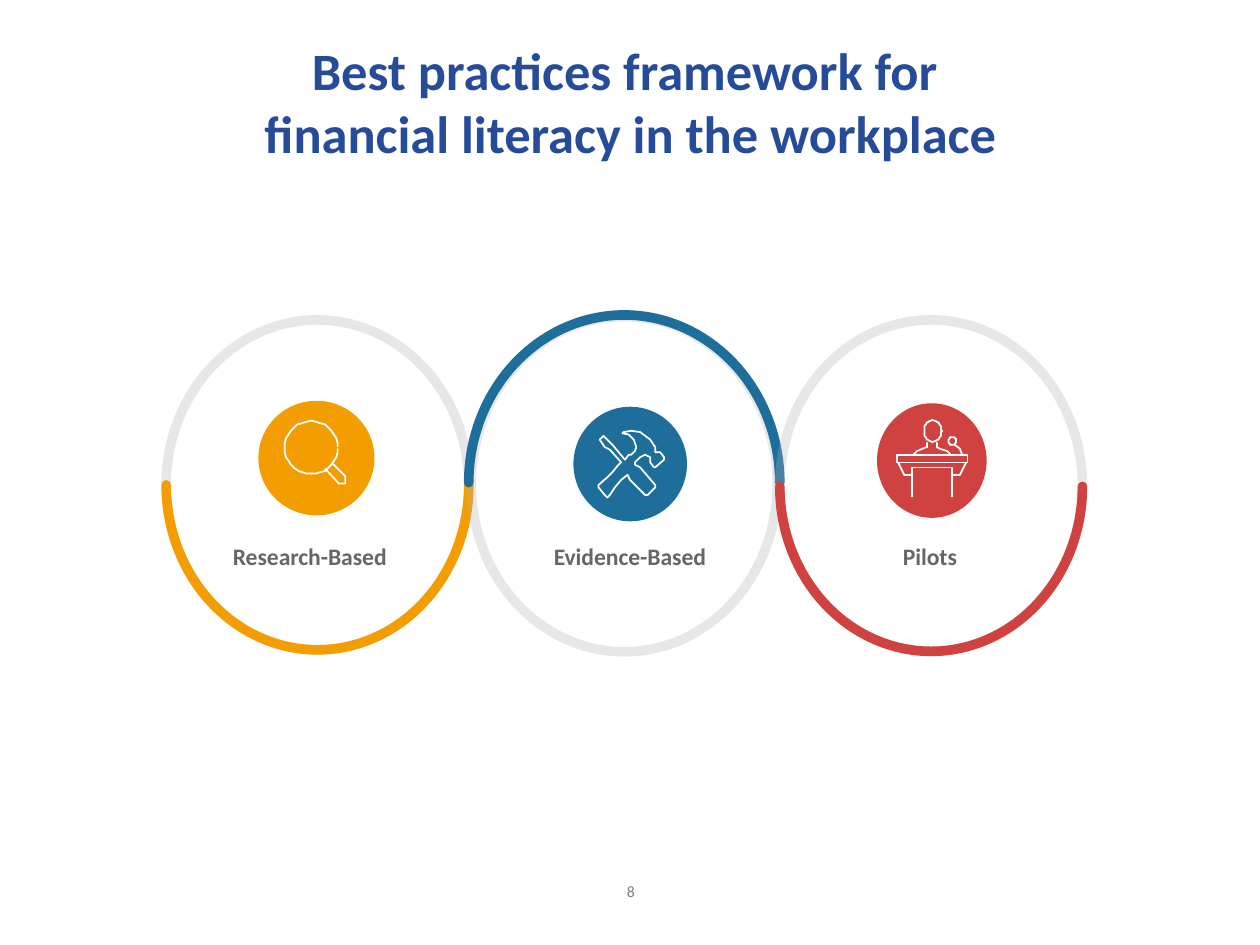
"""Build the slide on the best practices framework for workplace financial literacy."""
import math
from dataclasses import dataclass

import pptx
import pptx.dml.color
import pptx.enum.shapes
import pptx.enum.text
import pptx.oxml.ns
import pptx.util
from lxml import etree
from pptx.util import Cm

SHAPE = pptx.enum.shapes.MSO_SHAPE
ANCHOR = pptx.enum.text.MSO_ANCHOR
AUTO_SIZE = pptx.enum.text.MSO_AUTO_SIZE
CENTER = pptx.enum.text.PP_ALIGN.CENTER

COLORS = {
    "title": "264C99", "label": "666666", "number": "7D7D7D", "ring": "B2B2B2",
    "research": "F49D00", "evidence": "1D6E9B", "pilots": "CF423F", "icon": "FFFFFF",
}
RING_WEIGHT = 5.5
RING_OPACITY = "30000"
HALF_TURN = 108
ICON_UNIT = Cm(2.54) / 100

Box = tuple[float, float, float, float]
Stroke = list[tuple[float, float]]


@dataclass(frozen=True)
class Practice:
    label: str
    color: str
    ring: Box
    arc: Box
    arc_rotation: int
    badge: Box
    label_left: float
    icon_origin: tuple[float, float]
    icon: list[Stroke]


def oval(cx: float, cy: float, rx: float, ry: float) -> Stroke:
    angles = [math.radians(step * 10) for step in range(37)]
    return [(cx + rx * math.cos(angle), cy + ry * math.sin(angle)) for angle in angles]


MAGNIFIER = [
    oval(21, 21.5, 21, 21),
    [(32.5, 38.5), (43, 49.5), (45, 50.5), (47.5, 49.5), (48.5, 47), (47.5, 44.5), (37.5, 34)],
]
TOOLS = [[
    (8, 53.5), (6, 52.5), (0.7, 46), (0.7, 44), (8, 38.5), (12, 34), (16, 29), (18.7, 26.5),
    (10, 15.5), (6.5, 14.5), (1.7, 8.5), (5, 5), (10.5, 9.5), (11.5, 12.5), (21.5, 23.5),
    (25, 20.5), (27, 20.5), (29.5, 17), (31, 14), (29, 8), (25, 4.5), (20, 3), (21, 1.5),
    (27, 0.7), (34, 2.5), (41.5, 8.5), (45.5, 14), (46, 17.5), (50, 18.3), (53, 21.5),
    (53, 23.5), (46.5, 30), (45, 30), (42.5, 26.5), (42, 22), (38, 19.5), (34, 21.5),
    (30.5, 25.5), (30, 28.2), (33.5, 30), (45.5, 43.5), (45.5, 46.5), (40, 52.5),
    (37.5, 52.5), (25.5, 39.5), (24, 36), (19, 40.5), (14, 46), (10, 52.5), (8, 53.5),
]]
PODIUM = [
    oval(28.5, 9, 7, 8.5),
    [(13, 28), (16, 25), (23, 22.5), (24.5, 22), (24.5, 17.5)],
    [(32, 17.5), (32, 22), (34, 23), (40, 25), (43, 28)],
    [(0.5, 28.5), (55.5, 28.5), (55.5, 33.5), (0.5, 33.5), (0.5, 28.5)],
    [(1, 34), (5.5, 44), (11.5, 44)],
    [(55, 34), (50.5, 44), (44.5, 44)],
    [(12, 61), (12, 38.5), (44, 38.5), (44, 61)],
    oval(44, 17, 3, 3),
    [(46.5, 19.5), (50, 23), (51.5, 28)],
]

PRACTICES = [
    Practice("Research-Based ", COLORS["research"], (3.35, 6.45, 6.1, 6.65),
             (3.35, 6.45, 6.1, 6.65), 180, (5.21, 8.08, 2.34, 2.31),
             3.25, (5.74, 8.48), MAGNIFIER),
    Practice("Evidence-Based", COLORS["evidence"], (9.5, 6.38, 6.17, 6.76),
             (9.45, 6.35, 6.27, 6.76), 0, (11.56, 8.2, 2.29, 2.31),
             9.65, (12.04, 8.66), TOOLS),
    Practice("Pilots ", COLORS["pilots"], (15.72, 6.45, 6.1, 6.68),
             (15.72, 6.48, 6.1, 6.65), 180, (17.68, 8.13, 2.21, 2.31),
             15.75, (18.08, 8.46), PODIUM),
]


def rgb(color: str) -> pptx.dml.color.RGBColor:
    return pptx.dml.color.RGBColor.from_string(color)


def set_line(shape, color: str, weight: float) -> None:
    shape.shadow.inherit = False
    shape.fill.background()
    shape.line.color.rgb = rgb(color)
    shape.line.width = pptx.util.Pt(weight)


def write_text(text_frame, text: str, size: float, color: str, bold: bool = False) -> None:
    frame_format = {"word_wrap": True, "vertical_anchor": ANCHOR.TOP, "auto_size": AUTO_SIZE.NONE}
    for name, value in frame_format.items():
        setattr(text_frame, name, value)
    text_frame.text = text
    paragraph = text_frame.paragraphs[0]
    paragraph.alignment = CENTER
    font_format = {"name": "Calibri", "size": pptx.util.Pt(size), "bold": bold}
    for run in paragraph.runs:
        for name, value in font_format.items():
            setattr(run.font, name, value)
        run.font.color.rgb = rgb(color)


def add_text(slide, box: Box, text: str, size: float, color: str, bold: bool = False) -> None:
    text_box = slide.shapes.add_textbox(*map(Cm, box))
    write_text(text_box.text_frame, text, size, color, bold)


def add_ring(slide, practice: Practice) -> None:
    ring = slide.shapes.add_shape(SHAPE.OVAL, *map(Cm, practice.ring))
    set_line(ring, COLORS["ring"], RING_WEIGHT)
    ring_color = ring.element.spPr.find(".//" + pptx.oxml.ns.qn("a:srgbClr"))
    etree.SubElement(ring_color, pptx.oxml.ns.qn("a:alpha"), val=RING_OPACITY)

    arc = slide.shapes.add_shape(SHAPE.ARC, *map(Cm, practice.arc))
    arc.adjustments[0] = HALF_TURN
    arc.adjustments[1] = 0
    arc.rotation = practice.arc_rotation
    set_line(arc, practice.color, RING_WEIGHT)
    arc.element.spPr.find(pptx.oxml.ns.qn("a:ln")).set("cap", "rnd")


def add_badge(slide, practice: Practice) -> None:
    badge = slide.shapes.add_shape(SHAPE.OVAL, *map(Cm, practice.badge))
    badge.shadow.inherit = False
    badge.fill.solid()
    badge.fill.fore_color.rgb = rgb(practice.color)
    badge.line.fill.background()


def add_icon(slide, practice: Practice) -> None:
    first, *others = practice.icon
    outline = slide.shapes.build_freeform(*first[0], scale=ICON_UNIT)
    outline.add_line_segments(first[1:], close=False)
    for stroke in others:
        outline.move_to(*stroke[0])
        outline.add_line_segments(stroke[1:], close=False)
    icon = outline.convert_to_shape(*map(Cm, practice.icon_origin))
    set_line(icon, COLORS["icon"], 1)


def main() -> None:
    presentation = pptx.Presentation()
    presentation.slide_width = Cm(25.4)
    presentation.slide_height = Cm(19.05)
    slide = presentation.slides.add_slide(presentation.slide_layouts[5])

    title = slide.shapes.title
    title_place = {"left": 4.65, "top": 0.64, "width": 16.13, "height": 1.68}
    for name, value in title_place.items():
        setattr(title, name, Cm(value))
    write_text(title.text_frame,
               "Best practices framework for \vfinancial literacy in the workplace",
               30, COLORS["title"], True)
    add_text(slide, (11.68, 17.65, 2.08, 1.02), "8", 9, COLORS["number"])

    for practice in PRACTICES:
        add_ring(slide, practice)
    for practice in PRACTICES:
        add_badge(slide, practice)
        add_text(slide, (practice.label_left, 10.8, 6.1, 0.84), practice.label, 13.5,
                 COLORS["label"], True)
        add_icon(slide, practice)

    presentation.save("out.pptx")


if __name__ == "__main__":
    main()
